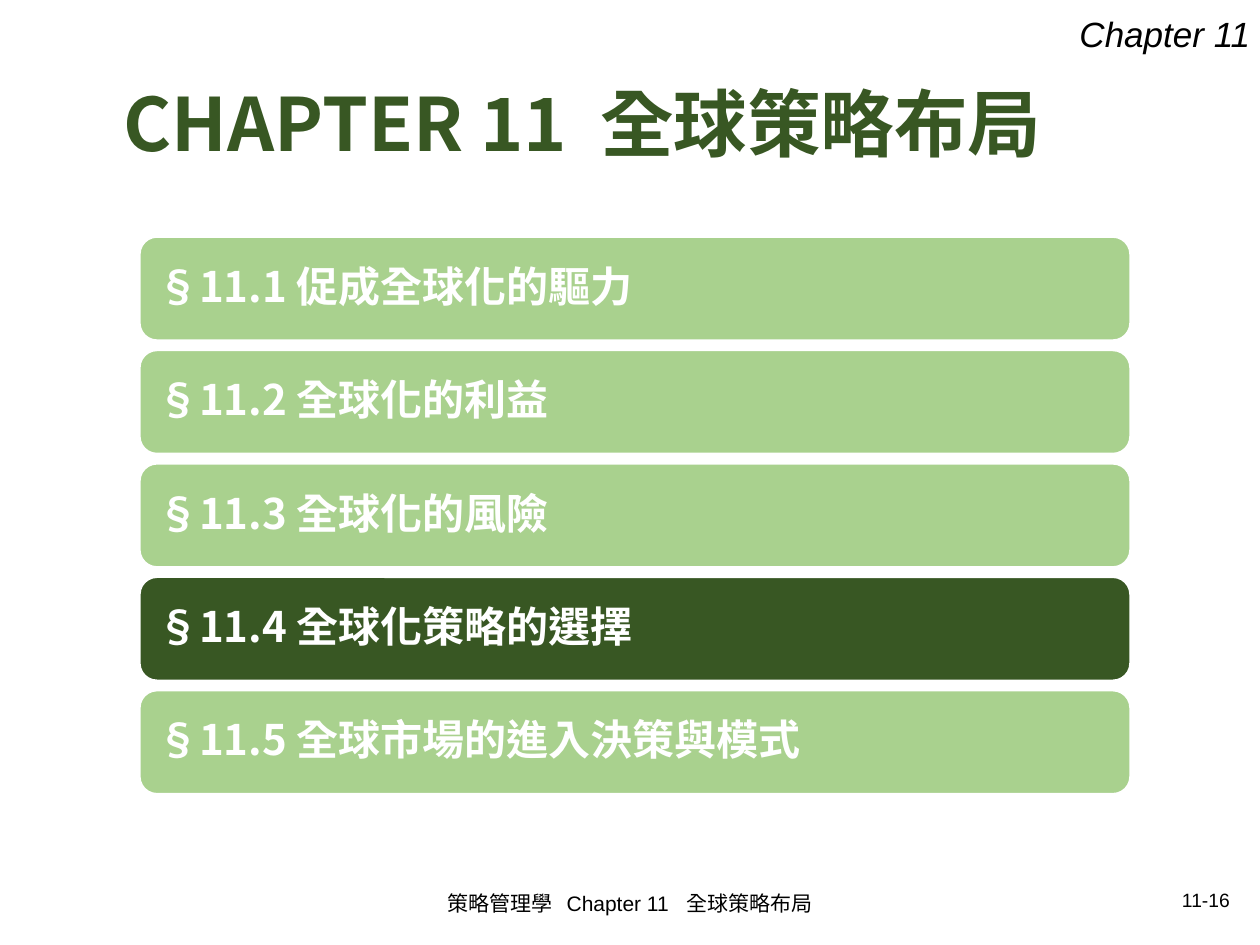
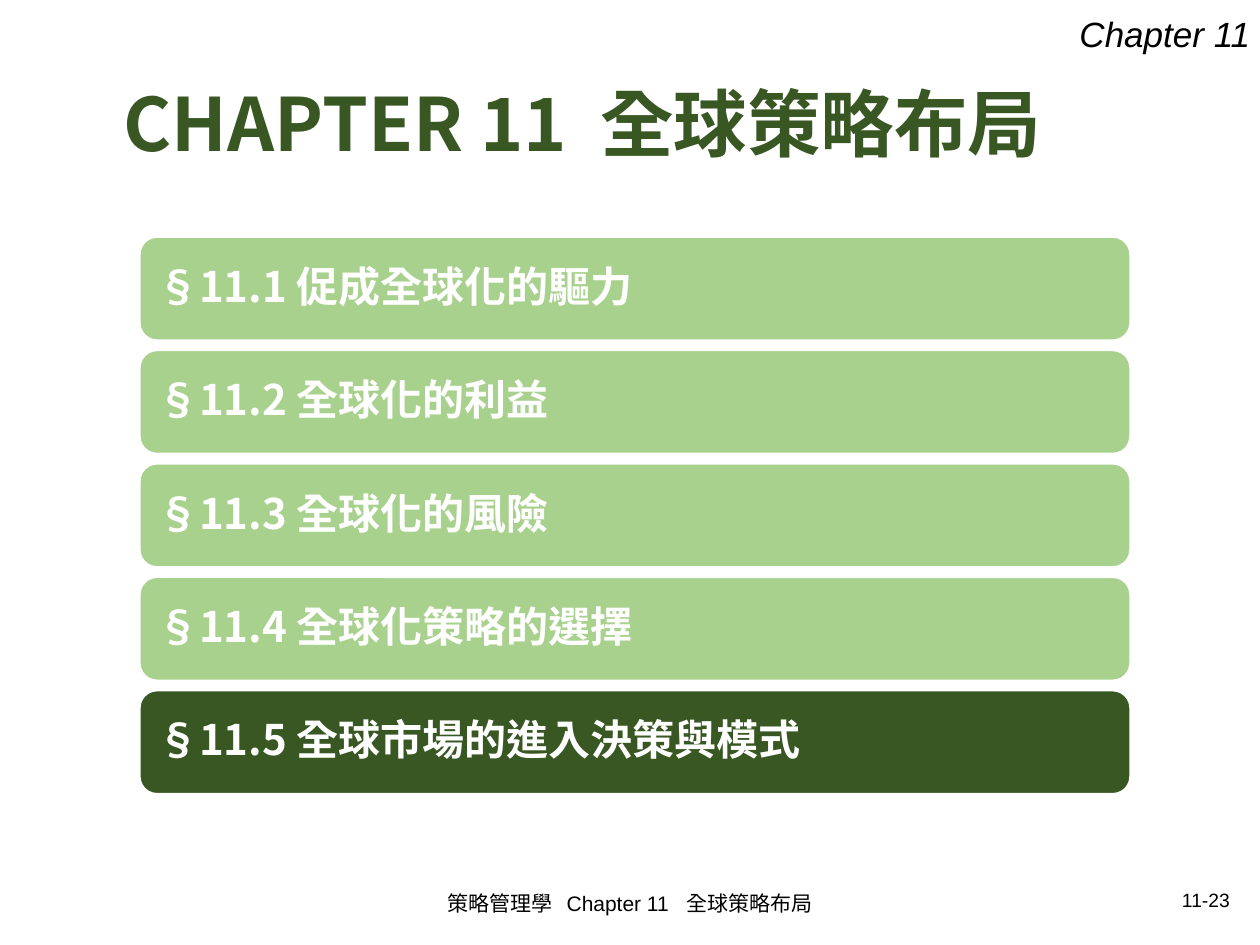
import pptx
import pptx.util
import pptx.dml.color
import pptx.enum.shapes
import pptx.enum.text
import pptx.oxml.ns
import lxml.etree

Pt = pptx.util.Pt
Align = pptx.enum.text.PP_ALIGN
Middle = pptx.enum.text.MSO_ANCHOR.MIDDLE
COLORS = {"dark": "385723", "light": "A9D18E", "white": "FFFFFF", "black": "000000"}
SANS = "Arial"
HAN = "Noto Sans CJK SC"
TOPICS = ["促成全球化的驅力", "全球化的利益", "全球化的風險", "全球化策略的選擇", "全球市場的進入決策與模式"]
PAGES = [("11-16", 4), ("11-23", 5)]


def tint(name):
    return pptx.dml.color.RGBColor.from_string(COLORS[name])


def write(frame, text, size, color, face=SANS, bold=False, italic=False,
          align=Align.LEFT, lead=1.0):
    para = frame.paragraphs[0]
    para.alignment = align
    para.line_spacing = lead
    run = para.add_run()
    run.text = text
    font = run.font
    font.size = Pt(size)
    font.name = face
    font.bold = bold
    font.italic = italic
    font.color.rgb = tint(color)
    props = run._r.get_or_add_rPr()
    props.set("lang", "zh-TW")
    east = lxml.etree.SubElement(props, pptx.oxml.ns.qn("a:ea"))
    east.set("typeface", HAN)
    return para


def label(slide, box, text, size, wrap=True, anchor=Middle, **style):
    frame = slide.shapes.add_textbox(*map(Pt, box)).text_frame
    frame.word_wrap = wrap
    frame.vertical_anchor = anchor
    write(frame, text, size, "black", **style)


def add_title(slide, box):
    title = slide.shapes.title
    title.left, title.top, title.width, title.height = map(Pt, box)
    frame = title.text_frame
    frame.vertical_anchor = Middle
    frame.auto_size = pptx.enum.text.MSO_AUTO_SIZE.NONE
    write(frame, "CHAPTER 11  全球策略布局", 42, "dark", face=HAN, bold=True, lead=0.9)


def add_topics(slide, box, active, gap=5.8):
    left, top, width, height = box
    tall = (height - gap * (len(TOPICS) - 1)) / len(TOPICS)
    for index, topic in enumerate(TOPICS):
        place = (left, top + index * (tall + gap), width, tall)
        bar = slide.shapes.add_shape(
            pptx.enum.shapes.MSO_SHAPE.ROUNDED_RECTANGLE, *map(Pt, place))
        bar.shadow.inherit = False
        bar.fill.solid()
        bar.fill.fore_color.rgb = tint("dark" if index + 1 == active else "light")
        bar.line.color.rgb = tint("white")
        bar.line.width = Pt(1)
        frame = bar.text_frame
        frame.word_wrap = True
        frame.vertical_anchor = Middle
        frame.margin_left = frame.margin_right = Pt(7.2)
        frame.margin_top = frame.margin_bottom = Pt(7.2)
        para = write(frame, f"§11.{index + 1} {topic}", 24, "white",
                     face=HAN, bold=True, lead=0.9)
        para.space_after = Pt(8.4)


def add_frame(slide, page):
    label(slide, (238.3, 501.8, 243.4, 28.8), "策略管理學   Chapter 11   全球策略布局", 12,
          align=Align.CENTER)
    label(slide, (508.3, 503.3, 201.6, 21.6), page, 11, align=Align.RIGHT)
    label(slide, (609.8, 3.6, 113, 31.7), "Chapter 11", 20, wrap=False,
          anchor=pptx.enum.text.MSO_ANCHOR.TOP, italic=True)


def add_outline(deck, page, active):
    slide = deck.slides.add_slide(deck.slide_layouts[5])
    add_frame(slide, page)
    add_title(slide, (63.4, 43.2, 598.3, 59))
    add_topics(slide, (79.9, 135.4, 565.9, 318.2), active)


def main():
    deck = pptx.Presentation()
    deck.slide_width, deck.slide_height = Pt(720), Pt(540)
    for page, active in PAGES:
        add_outline(deck, page, active)
    deck.save("out.pptx")


if __name__ == "__main__":
    main()
